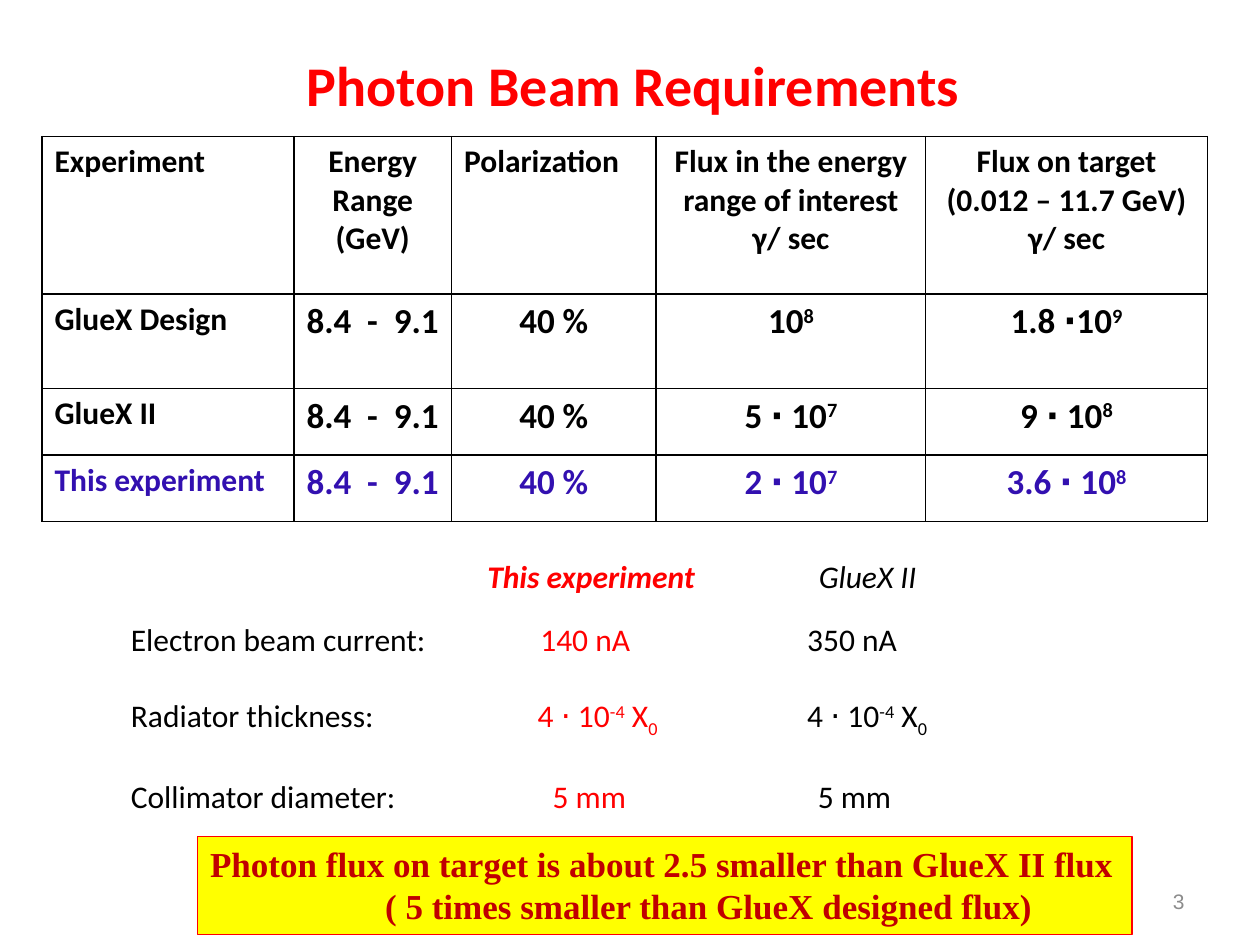
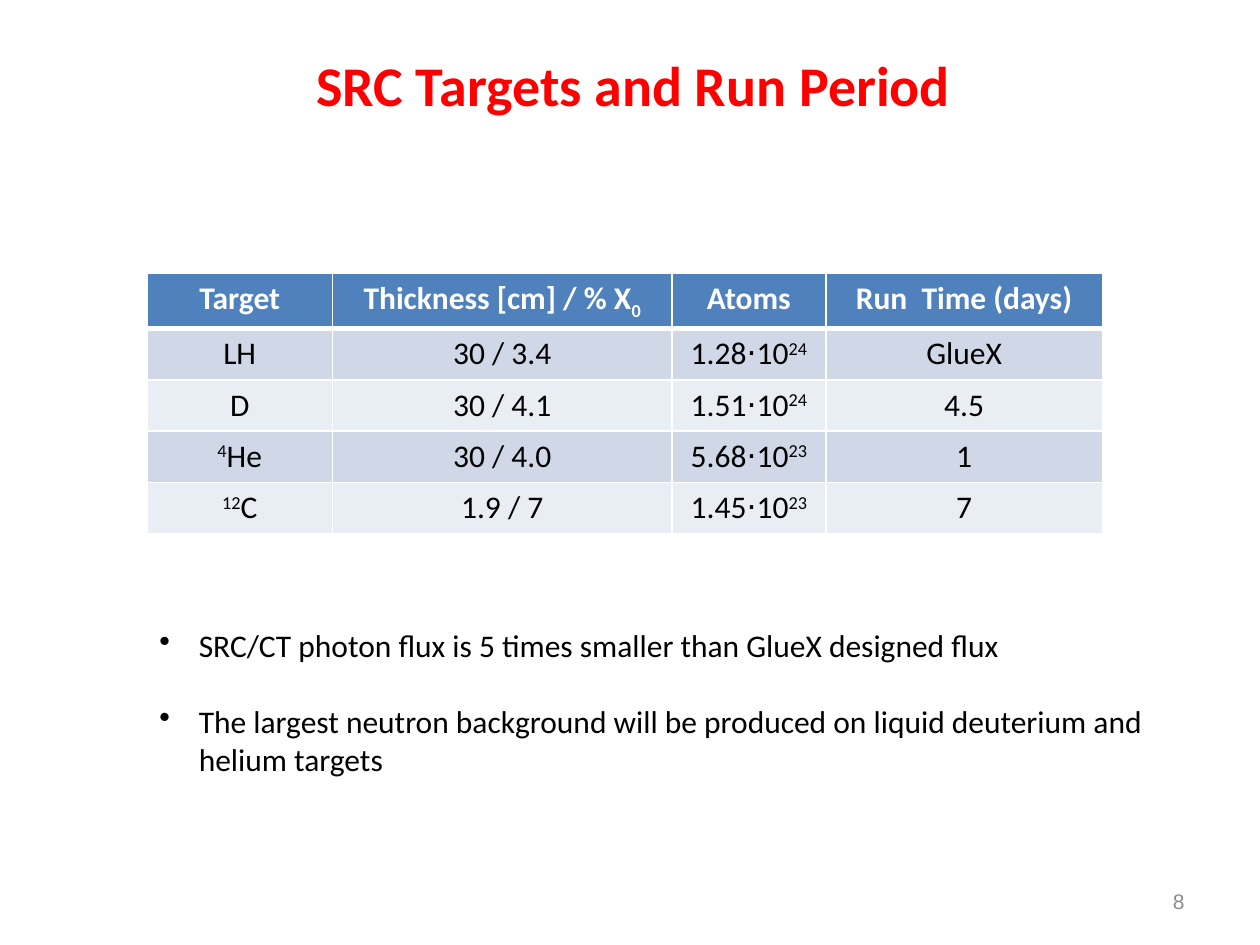
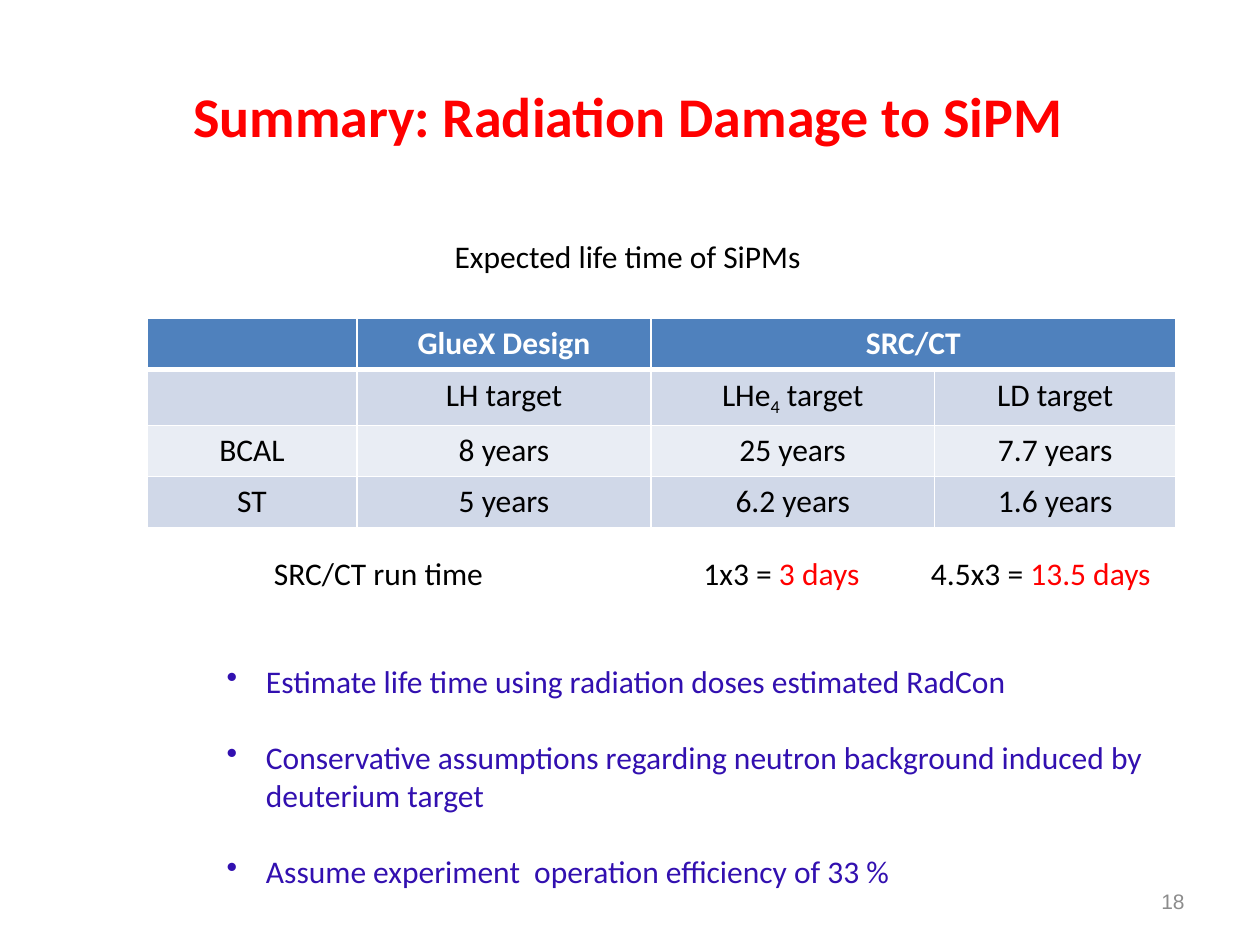
"""Build three slides on photon beam requirements, targets and radiation damage."""

from dataclasses import dataclass, replace

import pptx
import pptx.dml.color
import pptx.enum.shapes
import pptx.enum.text
import pptx.oxml.ns
import pptx.oxml.xmlchemy
import pptx.presentation
import pptx.shapes.autoshape
import pptx.slide
import pptx.table
import pptx.text.text
import pptx.util
from lxml import etree

Pt = pptx.util.Pt
RGBColor = pptx.dml.color.RGBColor
Align = pptx.enum.text.PP_ALIGN
Anchor = pptx.enum.text.MSO_ANCHOR

BLACK = RGBColor(0x00, 0x00, 0x00)
WHITE = RGBColor(0xFF, 0xFF, 0xFF)
RED = RGBColor(0xFF, 0x00, 0x00)
DARK_RED = RGBColor(0xC0, 0x00, 0x00)
YELLOW = RGBColor(0xFF, 0xFF, 0x00)
INDIGO = RGBColor(0x32, 0x10, 0xB0)
GRAY = RGBColor(0x8C, 0x8C, 0x8C)
HEADER_BLUE = RGBColor(0x4F, 0x81, 0xBD)
BANDS = (RGBColor(0xE9, 0xED, 0xF4), RGBColor(0xD0, 0xD8, 0xE8))

BULLET_INDENT = 22.5
PARAGRAPH_GAP = 22
BAND_ROW = 29.3


@dataclass(frozen=True)
class Style:
    """Font settings of a paragraph."""

    size: float = 18
    color: RGBColor = BLACK
    bold: bool = False
    italic: bool = False
    name: str = "Calibri"


@dataclass(frozen=True)
class Piece:
    """Part of a line with its own colour or baseline."""

    text: str
    color: RGBColor | None = None
    baseline: int = 0


@dataclass(frozen=True)
class Line:
    """One paragraph and its layout."""

    pieces: tuple[Piece, ...]
    style: Style = Style()
    align: Align = Align.LEFT
    gap: float = 0
    tabs: tuple[float, ...] = ()
    indent: float = 0
    bullet: bool = False


@dataclass(frozen=True)
class Box:
    """Position and size in points."""

    left: float
    top: float
    width: float
    height: float


@dataclass(frozen=True)
class Grid:
    """Place, column widths and row heights of a table."""

    left: float
    top: float
    columns: tuple[float, ...]
    rows: tuple[float, ...]


BODY = Style()
TITLE = Style(32, RED, bold=True)
PAGE_NUMBER = Style(12, GRAY, name="Arial")
CALLOUT = Style(20, DARK_RED, bold=True, name="Times New Roman")
BAND_HEADER = Style(color=WHITE, bold=True)
PAGE_BOX = Box(516, 500.4, 168, 28.8)


def rich(text: str, color: RGBColor | None = None) -> tuple[Piece, ...]:
    """Split text at bars; a leading ^ raises a part and a leading _ lowers it."""
    baselines = {"^": 30000, "_": -25000}
    return tuple(
        Piece(part[1:] if part[0] in baselines else part, color, baselines.get(part[0], 0))
        for part in text.split("|")
        if part
    )


def write(paragraph: pptx.text.text._Paragraph, line: Line) -> None:
    """Fill a paragraph with a line."""
    paragraph.alignment = line.align
    paragraph.space_before = Pt(line.gap)
    properties = paragraph._p.get_or_add_pPr()
    if line.indent:
        properties.set("marL", str(Pt(line.indent)))
    if line.bullet:
        properties.set("indent", str(-Pt(line.indent)))
        etree.SubElement(properties, pptx.oxml.ns.qn("a:buChar"), char="•")
    if line.tabs:
        tab_list = etree.SubElement(properties, pptx.oxml.ns.qn("a:tabLst"))
        for position in line.tabs:
            etree.SubElement(tab_list, pptx.oxml.ns.qn("a:tab"), pos=str(Pt(position)), algn="l")
    font = paragraph.font
    font.name = line.style.name
    font.size = Pt(line.style.size)
    font.bold = line.style.bold
    font.italic = line.style.italic
    font.color.rgb = line.style.color
    for piece in line.pieces:
        run = paragraph.add_run()
        run.text = piece.text
        if piece.color is not None:
            run.font.color.rgb = piece.color
        if piece.baseline:
            run._r.get_or_add_rPr().set("baseline", str(piece.baseline))


def write_all(frame: pptx.text.text.TextFrame, lines: list[Line]) -> None:
    """Fill a text frame with lines."""
    for index, line in enumerate(lines):
        write(frame.add_paragraph() if index else frame.paragraphs[0], line)


def add_text(
    slide: pptx.slide.Slide, box: Box, lines: list[Line], anchor: Anchor = Anchor.TOP
) -> None:
    """Add a wrapping text box."""
    shape = slide.shapes.add_textbox(Pt(box.left), Pt(box.top), Pt(box.width), Pt(box.height))
    shape.text_frame.word_wrap = True
    shape.text_frame.vertical_anchor = anchor
    write_all(shape.text_frame, lines)


def add_bullets(slide: pptx.slide.Slide, box: Box, texts: list[str], style: Style = BODY) -> None:
    """Add a bulleted list with even gaps."""
    lines = [
        Line(rich(text), style, gap=PARAGRAPH_GAP if index else 0, indent=BULLET_INDENT, bullet=True)
        for index, text in enumerate(texts)
    ]
    add_text(slide, box, lines)


def add_page(
    presentation: pptx.presentation.Presentation, title: str, number: int, left: float, top: float
) -> pptx.slide.Slide:
    """Add a blank slide with its title and page number."""
    slide = presentation.slides.add_slide(presentation.slide_layouts[6])
    title_line = Line(rich(title), TITLE, Align.CENTER)
    add_text(slide, Box(left, top, 612, 60), [title_line], Anchor.MIDDLE)
    number_line = Line(rich(str(number)), PAGE_NUMBER, Align.RIGHT)
    add_text(slide, PAGE_BOX, [number_line], Anchor.MIDDLE)
    return slide


def add_grid(slide: pptx.slide.Slide, grid: Grid) -> pptx.table.Table:
    """Add an empty table without style options."""
    table = slide.shapes.add_table(
        len(grid.rows),
        len(grid.columns),
        Pt(grid.left),
        Pt(grid.top),
        Pt(sum(grid.columns)),
        Pt(sum(grid.rows)),
    ).table
    table.first_row = False
    table.horz_banding = False
    for column, width in zip(table.columns, grid.columns):
        column.width = Pt(width)
    for row, height in zip(table.rows, grid.rows):
        row.height = Pt(height)
    return table


def set_borders(
    cell: pptx.table._Cell, color: RGBColor, top: float = 1, bottom: float = 1
) -> None:
    """Draw the four edges of a cell."""
    properties = cell._tc.get_or_add_tcPr()
    for edge, width in (("L", 1), ("R", 1), ("T", top), ("B", bottom)):
        line = etree.SubElement(properties, pptx.oxml.ns.qn(f"a:ln{edge}"), w=str(Pt(width)))
        fill = etree.SubElement(line, pptx.oxml.ns.qn("a:solidFill"))
        etree.SubElement(fill, pptx.oxml.ns.qn("a:srgbClr"), val=str(color))


def add_banded_table(slide: pptx.slide.Slide, grid: Grid, rows: list[list[str]]) -> pptx.table.Table:
    """Add a centred table with a blue header and banded rows."""
    table = add_grid(slide, grid)
    for row_index, texts in enumerate(rows):
        header = row_index == 0
        for column_index, text in enumerate(texts):
            cell = table.cell(row_index, column_index)
            set_borders(cell, WHITE, 3 if row_index == 1 else 1, 3 if header else 1)
            cell.fill.solid()
            cell.fill.fore_color.rgb = HEADER_BLUE if header else BANDS[row_index % 2]
            style = BAND_HEADER if header else BODY
            write(cell.text_frame.paragraphs[0], Line(rich(text), style, Align.CENTER))
    return table


def add_flux_table(slide: pptx.slide.Slide) -> None:
    """Add the outlined table of beam requirements."""
    rows = [
        [
            "Experiment",
            "Energy Range (GeV)",
            "Polarization",
            "Flux in the energy range of interest\nγ/ sec",
            "Flux on target\n(0.012 – 11.7 GeV)\nγ/ sec",
        ],
        ["GlueX Design", "8.4  -  9.1", "40 %", "10|^8", "1.8 ⋅10|^9"],
        ["GlueX II", "8.4  -  9.1", "40 %", "5 ⋅ 10|^7", "9 ⋅ 10|^8"],
        ["This experiment", "8.4  -  9.1", "40 %", "2 ⋅ 10|^7", "3.6 ⋅ 10|^8"],
    ]
    table = add_grid(slide, Grid(24, 78, (144, 90, 117, 154, 161), (90, 54, 38, 38)))
    for row_index, texts in enumerate(rows):
        color = INDIGO if row_index == len(rows) - 1 else BLACK
        for column_index, text in enumerate(texts):
            cell = table.cell(row_index, column_index)
            set_borders(cell, BLACK)
            cell.fill.background()
            label = row_index == 0 or column_index == 0
            style = Style(18 if label else 20, color, bold=True)
            left = column_index == 0 or text == "Polarization"
            align = Align.LEFT if left else Align.CENTER
            write_all(cell.text_frame, [Line(rich(part), style, align) for part in text.split("\n")])


def add_callout(slide: pptx.slide.Slide) -> None:
    """Add the yellow conclusion box."""
    shape = slide.shapes.add_shape(
        pptx.enum.shapes.MSO_SHAPE.RECTANGLE, Pt(113), Pt(478), Pt(534), Pt(56)
    )
    shape.shadow.inherit = False
    shape.fill.solid()
    shape.fill.fore_color.rgb = YELLOW
    shape.line.color.rgb = RED
    shape.line.width = Pt(0.75)
    shape.text_frame.word_wrap = True
    shape.text_frame.vertical_anchor = Anchor.TOP
    first = Line(rich("Photon flux on target is about 2.5 smaller than GlueX II flux"), CALLOUT)
    second = Line(rich("( 5 times smaller than GlueX designed flux)"), CALLOUT, indent=100)
    write_all(shape.text_frame, [first, second])


def build_beam_slide(presentation: pptx.presentation.Presentation) -> None:
    """Build the slide on beam requirements."""
    slide = add_page(presentation, "Photon Beam Requirements", 3, 56, 18)
    add_flux_table(slide)
    heading = replace(BODY, italic=True)
    ours = replace(heading, color=RED, bold=True)
    add_text(slide, Box(271.4, 314.6, 140, 29), [Line(rich("This experiment"), ours)])
    add_text(slide, Box(460.8, 314.6, 80, 29), [Line(rich("GlueX II"), heading)])
    settings = [
        ("Electron beam current:", "140 nA", "350 nA", (234, 386.5)),
        ("Radiator thickness:", "4 ⋅ 10|^-4| X|_0", "4 ⋅ 10|^-4| X|_0", (232.5, 386.5)),
        ("Collimator diameter:", "5 mm", "5 mm", (241, 392.5)),
    ]
    lines = [
        Line(
            rich(f"{label}\t") + rich(value, RED) + rich(f"\t|{reference}"),
            gap=PARAGRAPH_GAP if index else 0,
            tabs=tabs,
        )
        for index, (label, value, reference, tabs) in enumerate(settings)
    ]
    add_text(slide, Box(67.7, 350.6, 624, 117), lines)
    add_callout(slide)


def build_target_slide(presentation: pptx.presentation.Presentation) -> None:
    """Build the slide on targets and run times."""
    slide = add_page(presentation, "SRC Targets and Run Period", 8, 56, 18 + 20 - 20)
    rows = [
        ["Target", "Thickness [cm] / % X|_0", "Atoms", "Run  Time (days)"],
        ["LH", "30 / 3.4", "1.28⋅10|^24", "GlueX"],
        ["D", "30 / 4.1", "1.51⋅10|^24", "4.5"],
        ["^4|He", "30 / 4.0", "5.68⋅10|^23", "1"],
        ["^12|C", "1.9 / 7", "1.45⋅10|^23", "7"],
    ]
    add_banded_table(slide, Grid(84, 156, (106, 194, 88, 158), (BAND_ROW,) * 5), rows)
    bullets = [
        "SRC/CT photon flux is 5 times smaller than GlueX designed flux",
        "The largest neutron background will be produced on liquid deuterium and helium targets",
    ]
    add_bullets(slide, Box(84, 354.2, 588, 117), bullets)


def build_damage_slide(presentation: pptx.presentation.Presentation) -> None:
    """Build the slide on radiation damage."""
    slide = add_page(presentation, "Summary: Radiation Damage to SiPM", 18, 53, 36)
    rows = [
        ["", "GlueX Design", "SRC/CT", ""],
        ["", "LH target", "LHe|_4| target", "LD target"],
        ["BCAL", "8 years", "25 years", "7.7 years"],
        ["ST", "5 years", "6.2 years", "1.6 years"],
    ]
    table = add_banded_table(slide, Grid(84, 182, (120, 168, 162, 138), (BAND_ROW,) * 4), rows)
    table.cell(0, 2).merge(table.cell(0, 3))
    add_text(slide, Box(252.7, 131.8, 230, 29), [Line(rich("Expected life time of SiPMs"))])
    pieces = (
        rich("SRC/CT run time\t1x3 = ")
        + rich("3 days", RED)
        + rich("\t4.5x3 = ")
        + rich("13.5 days", RED)
    )
    add_text(slide, Box(149.4, 313.2, 540, 29), [Line(pieces, tabs=(245.5, 375.5))])
    bullets = [
        "Estimate life time using radiation doses estimated RadCon",
        "Conservative assumptions regarding neutron background induced by deuterium target",
        "Assume experiment  operation efficiency of 33 %",
    ]
    add_bullets(slide, Box(122.4, 374.8, 538, 138), bullets, replace(BODY, color=INDIGO))


def main() -> None:
    """Build and save the presentation."""
    presentation = pptx.Presentation()
    presentation.slide_width = Pt(720)
    presentation.slide_height = Pt(540)
    build_beam_slide(presentation)
    build_target_slide(presentation)
    build_damage_slide(presentation)
    presentation.save("out.pptx")


if __name__ == "__main__":
    main()
